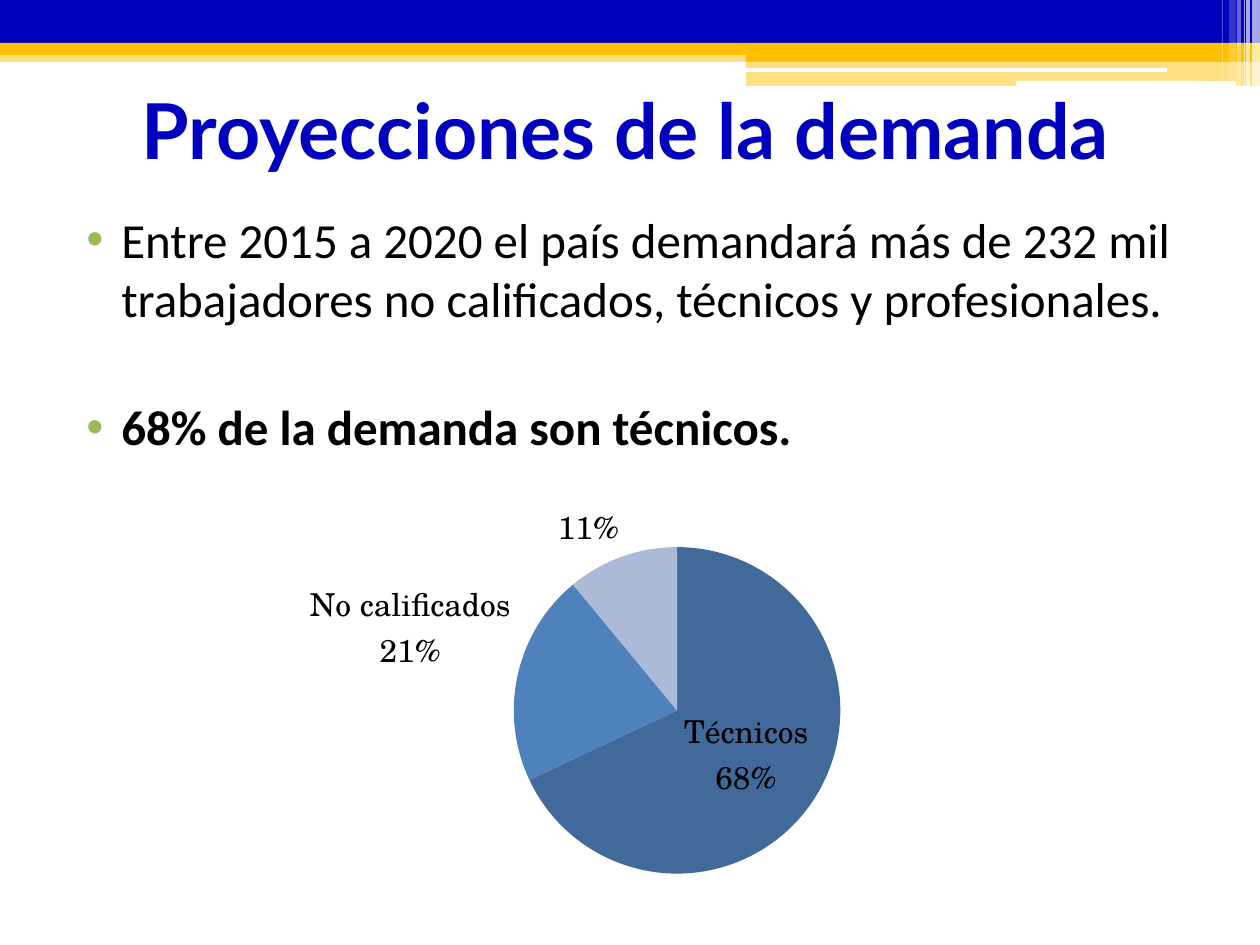
from typing import NamedTuple

import pptx
import pptx.chart.data
import pptx.dml.color
import pptx.enum.chart
import pptx.enum.shapes
import pptx.enum.text
import pptx.oxml
import pptx.oxml.ns
import pptx.util

RGB = pptx.dml.color.RGBColor
SHAPE = pptx.enum.shapes.MSO_SHAPE
LABEL = pptx.enum.chart.XL_LABEL_POSITION
qn = pptx.oxml.ns.qn

BLUE = RGB(0x00, 0x00, 0xBF)
GOLD = RGB(0xFF, 0xC0, 0x00)
WHITE = RGB(0xFF, 0xFF, 0xFF)
BLACK = RGB(0x00, 0x00, 0x00)
GREEN = RGB(0x9B, 0xBB, 0x59)
SLICE_COLORS = (RGB(0x41, 0x6A, 0x9B), RGB(0x4F, 0x81, 0xBD), RGB(0xAA, 0xBA, 0xD7))

PX_PER_INCH = 126


class Box(NamedTuple):
    left: int
    top: int
    width: int
    height: int


class Bar(NamedTuple):
    box: Box
    color: RGB
    opacity: int = 100
    kind: SHAPE = SHAPE.RECTANGLE


class Bullet(NamedTuple):
    text: str
    bold: bool
    space_before: int


SLIDE = Box(0, 0, 1260, 945)
TITLE = Box(59, 55, 1134, 148)
BODY = Box(59, 203, 1134, 596)
CHART = Box(63, 483, 1130, 460)
PIE = Box(514, 547, 327, 327)

BARS = (
    Bar(Box(0, 50, 1260, 12), GOLD, 50),
    Bar(Box(0, 0, 1260, 43), BLUE),
    Bar(Box(0, 43, 1260, 12), GOLD),
    Bar(Box(746, 49, 514, 13), GOLD),
    Bar(Box(746, 61, 514, 25), GOLD, 50),
    Bar(Box(745, 68, 422, 4), WHITE, kind=SHAPE.ROUNDED_RECTANGLE),
    Bar(Box(1016, 81, 220, 5), WHITE, kind=SHAPE.ROUNDED_RECTANGLE),
    Bar(Box(1252, 0, 8, 86), WHITE, 65),
    Bar(Box(1246, 0, 4, 86), WHITE, 65),
    Bar(Box(1244, 0, 1, 86), WHITE, 60),
    Bar(Box(1237, 0, 4, 86), WHITE, 40),
    Bar(Box(1229, 0, 7, 81), WHITE, 20),
    Bar(Box(1222, 0, 1, 81), WHITE, 30),
)

BULLETS = (
    Bullet("Entre 2015 a 2020 el país demandará más de 232 mil trabajadores "
           "no calificados, técnicos y profesionales.", False, 3),
    Bullet("68% de la demanda son técnicos.", True, 40),
)

DEMAND = (("Técnicos", 68), ("No calificados", 21), ("", 11))


def px(length: int) -> int:
    return round(length * 914400 / PX_PER_INCH)


def place(box: Box) -> list[int]:
    return [px(length) for length in box]


def style_font(font, name: str, size: int, color: RGB, bold: bool = False) -> None:
    font.name = name
    font.size = pptx.util.Pt(size)
    font.color.rgb = color
    font.bold = bold


def add_bar(slide, bar: Bar) -> None:
    shape = slide.shapes.add_shape(bar.kind, *place(bar.box))
    shape.shadow.inherit = False
    shape.fill.solid()
    shape.fill.fore_color.rgb = bar.color
    shape.line.fill.background()
    if bar.opacity < 100:
        color = shape.fill._xPr.find(".//" + qn("a:srgbClr"))
        color.append(new_element("a:alpha", val=bar.opacity * 1000))


def new_element(tag: str, **attributes):
    element = pptx.oxml.xmlchemy.OxmlElement(tag)
    for name, value in attributes.items():
        element.set(name, str(value))
    return element


def set_title(slide) -> None:
    title = slide.shapes.title
    title.left, title.top, title.width, title.height = place(TITLE)
    frame = title.text_frame
    frame.text = "Proyecciones de la demanda"
    frame.vertical_anchor = pptx.enum.text.MSO_ANCHOR.MIDDLE
    para = frame.paragraphs[0]
    para.alignment = pptx.enum.text.PP_ALIGN.CENTER
    style_font(para.runs[0].font, "Lato", 44, BLUE, True)


def add_bullets(slide) -> None:
    frame = slide.shapes.add_textbox(*place(BODY)).text_frame
    frame.word_wrap = True
    for index, bullet in enumerate(BULLETS):
        para = frame.add_paragraph() if index else frame.paragraphs[0]
        para.text = bullet.text
        para.space_before = pptx.util.Pt(bullet.space_before)
        style_font(para.runs[0].font, "Calibri", 28, BLACK, bullet.bold)
        properties = para._p.get_or_add_pPr()
        properties.set("marL", str(px(50)))
        properties.set("indent", str(px(-35)))
        bullet_color = new_element("a:buClr")
        bullet_color.append(new_element("a:srgbClr", val=GREEN))
        properties.append(bullet_color)
        properties.append(new_element("a:buFont", typeface="Arial"))
        properties.append(new_element("a:buChar", char="•"))


def show_name_and_percent(labels) -> None:
    """Switch a labels element to category and percent on separate lines."""
    for name, value in (("Val", 0), ("CatName", 1), ("Percent", 1)):
        labels.find(qn("c:show" + name)).set("val", str(value))
    separator = new_element("c:separator")
    separator.text = "\n"
    labels.find(qn("c:showPercent")).getparent().insert(
        labels.index(labels.find(qn("c:showBubbleSize"))) + 1, separator)


def fix_plot_area(chart) -> None:
    """Pin the pie to its own box inside the chart frame."""
    plot_area = chart._chartSpace.chart.plotArea
    for old in plot_area.findall(qn("c:layout")):
        plot_area.remove(old)
    layout = new_element("c:layout")
    manual = new_element("c:manualLayout")
    for tag, value in (
        ("layoutTarget", "inner"), ("xMode", "edge"), ("yMode", "edge"),
        ("x", round((PIE.left - CHART.left) / CHART.width, 3)),
        ("y", round((PIE.top - CHART.top) / CHART.height, 3)),
        ("w", round(PIE.width / CHART.width, 3)),
        ("h", round(PIE.height / CHART.height, 3)),
    ):
        manual.append(new_element("c:" + tag, val=value))
    layout.append(manual)
    plot_area.insert(0, layout)


def add_pie(slide) -> None:
    data = pptx.chart.data.CategoryChartData()
    data.categories = [name for name, _ in DEMAND]
    data.add_series("Series 1", [value for _, value in DEMAND])
    chart = slide.shapes.add_chart(
        pptx.enum.chart.XL_CHART_TYPE.PIE, *place(CHART), data).chart
    chart.has_legend = False
    chart.has_title = False
    style_font(chart.font, "TeX Gyre Schola", 18, BLACK)
    fix_plot_area(chart)
    chart.plots[0].vary_by_categories = True
    series = chart.plots[0].series[0]
    for index, color in enumerate(SLICE_COLORS):
        fill = series.points[index].format.fill
        fill.solid()
        fill.fore_color.rgb = color
    labels = series.data_labels
    labels.position = LABEL.OUTSIDE_END
    style_font(labels.font, "TeX Gyre Schola", 18, BLACK)
    inner_label = series.points[0].data_label
    inner_label.position = LABEL.CENTER
    style_font(inner_label.font, "TeX Gyre Schola", 18, BLACK)
    for element in (labels._element, labels._element.find(qn("c:dLbl"))):
        show_name_and_percent(element)


def main() -> None:
    deck = pptx.Presentation()
    deck.slide_width, deck.slide_height = px(SLIDE.width), px(SLIDE.height)
    slide = deck.slides.add_slide(deck.slide_layouts[5])
    for bar in BARS:
        add_bar(slide, bar)
    set_title(slide)
    add_bullets(slide)
    add_pie(slide)
    deck.save("out.pptx")


if __name__ == "__main__":
    main()
